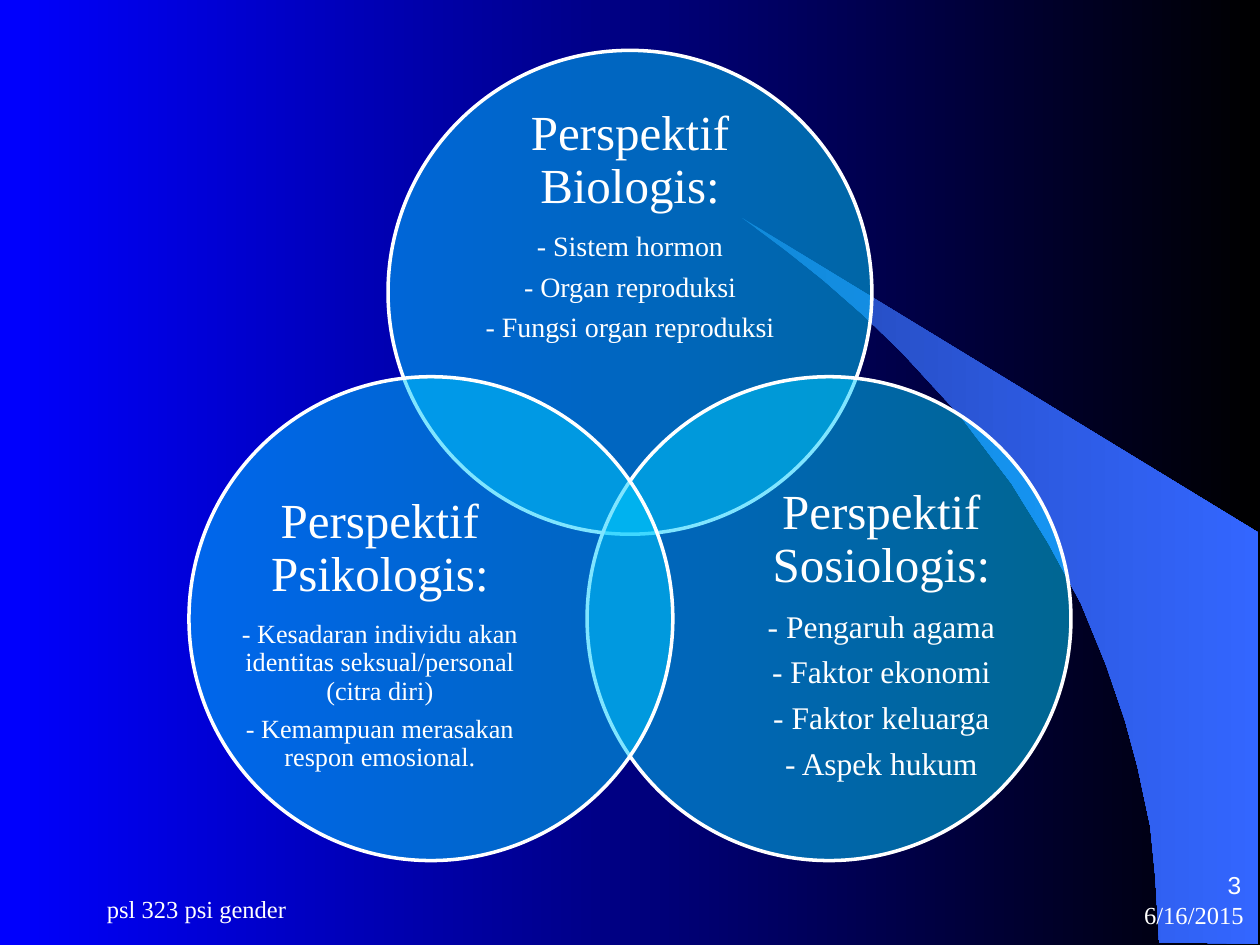
"""Build a slide with three overlapping circles of perspectives on gender psychology."""
import lxml.etree
import pptx
import pptx.dml.color
import pptx.enum.shapes
import pptx.enum.text
import pptx.oxml.ns
import pptx.util

ALIGN = pptx.enum.text.PP_ALIGN
ANCHOR = pptx.enum.text.MSO_ANCHOR
SERIF = "Times New Roman"

deck = pptx.Presentation()
deck.slide_width = pptx.util.Inches(10)
deck.slide_height = pptx.util.Inches(7.5)
column = deck.slide_width / 100
slide = deck.slides.add_slide(deck.slide_layouts[6])


def paint(color, value):
    color.rgb = pptx.dml.color.RGBColor.from_string(value)


def write(place, lines, align, anchor, margins, wrap, font=SERIF):
    box = slide.shapes.add_textbox(*[round(n * column) for n in place])
    frame = box.text_frame
    frame.word_wrap = wrap
    frame.vertical_anchor = anchor
    frame.margin_left = frame.margin_right = round(margins[0] * column)
    frame.margin_top = frame.margin_bottom = round(margins[1] * column)
    for index, (words, size) in enumerate(lines):
        paragraph = frame.add_paragraph() if index else frame.paragraphs[0]
        paragraph.alignment = align
        if wrap:
            paragraph.line_spacing = 0.9
            paragraph.space_after = pptx.util.Pt(round(0.37 * size, 1))
        run = paragraph.add_run()
        run.text = words
        run.font.size = pptx.util.Pt(size)
        run.font.name = font
        paint(run.font.color, "FFFFFF")


backdrop = slide.background.fill
sweep_points = [
    (920, 748), (999, 749), (999, 423), (589, 173), (624, 199), (653, 222),
    (685, 250), (716, 280), (762, 330), (803, 384), (832, 431), (858, 479),
    (878, 528), (893, 572), (903, 609), (913, 656), (917, 696),
]
outline = slide.shapes.build_freeform(*sweep_points[0], scale=column / 10)
outline.add_line_segments(sweep_points[1:], close=True)
sweep = outline.convert_to_shape()
sweep.shadow.inherit = False
sweep.line.fill.background()

for fill, ends in ((backdrop, ("0000FF", "000000")), (sweep.fill, ("2449B6", "3366FF"))):
    fill.gradient()
    fill.gradient_angle = 0
    for stop, shade in zip(fill.gradient_stops, ends):
        paint(stop.color, shade)

diameter = 38.4
perspectives = [
    ((30.8, 4), (35.9, 9.3, 28.2, 17.3), "Perspektif Biologis:", 16,
     ["- Sistem hormon", "- Organ reproduksi", "- Fungsi organ reproduksi"]),
    ((46.6, 29.9), (58.4, 39.8, 23.1, 21.1), "Perspektif Sosiologis:", 18,
     ["- Pengaruh agama", "- Faktor ekonomi", "- Faktor keluarga", "- Aspek hukum"]),
    ((15, 29.9), (18.6, 39.8, 23.1, 21.1), "Perspektif Psikologis:", 15,
     ["- Kesadaran individu akan identitas seksual/personal (citra diri)",
      "- Kemampuan merasakan respon emosional."]),
]
for corner, text_area, heading, size, factors in perspectives:
    circle = slide.shapes.add_shape(
        pptx.enum.shapes.MSO_SHAPE.OVAL,
        *[round(n * column) for n in (*corner, diameter, diameter)])
    circle.shadow.inherit = False
    circle.fill.solid()
    paint(circle.fill.fore_color, "00CCFF")
    tint = circle.element.spPr.find(".//" + pptx.oxml.ns.qn("a:srgbClr"))
    lxml.etree.SubElement(tint, pptx.oxml.ns.qn("a:alpha"), val="50000")
    paint(circle.line.color, "FFFFFF")
    circle.line.width = pptx.util.Pt(2)
    lines = [(heading, 28)] + [(factor, size) for factor in factors]
    write(text_area, lines, ALIGN.CENTER, ANCHOR.MIDDLE, (0, 0), True)

write((78.9, 70.5, 20.8, 4.2), [("6/16/2015", 14)], ALIGN.RIGHT, ANCHOR.MIDDLE, (1, 0.5), False)
write((7.5, 69.6, 46.7, 5), [("psl 323 psi gender", 14)], ALIGN.LEFT, ANCHOR.MIDDLE, (1, 0.5), False)
write((78.7, 67.2, 20.8, 4.2), [("3", 14)], ALIGN.RIGHT, ANCHOR.BOTTOM, (1, 0), False, "Arial")

deck.save("out.pptx")
